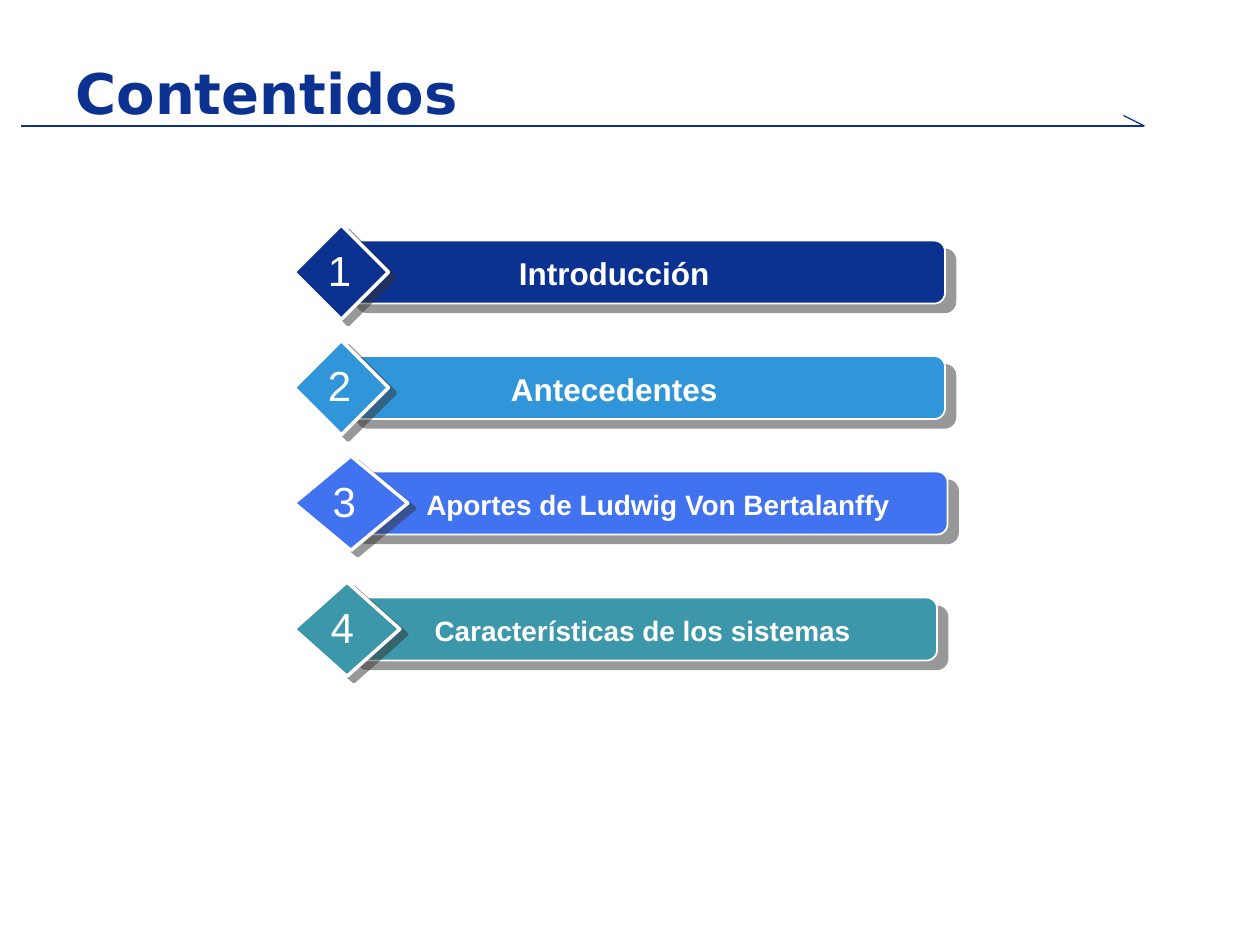
import pptx
import pptx.util
import pptx.dml.color
import pptx.enum.shapes
import pptx.enum.text
import pptx.oxml.ns
import lxml.etree

Pt = pptx.util.Pt
RGBColor = pptx.dml.color.RGBColor
SHAPE = pptx.enum.shapes.MSO_SHAPE
ALIGN = pptx.enum.text.PP_ALIGN
ANCHOR = pptx.enum.text.MSO_ANCHOR
qn = pptx.oxml.ns.qn

NAVY = RGBColor(0x0B, 0x31, 0x91)
SKY = RGBColor(0x31, 0x95, 0xD9)
BLUE = RGBColor(0x41, 0x73, 0xF1)
TEAL = RGBColor(0x3B, 0x97, 0xA9)
WHITE = RGBColor(0xFF, 0xFF, 0xFF)
SHADOW = RGBColor(0x33, 0x33, 0x33)


def add_block(kind, left, top, width, height, color, outline, distance, angle):
    block = slide.shapes.add_shape(kind, Pt(left), Pt(top), Pt(width), Pt(height))
    block.fill.solid()
    block.fill.fore_color.rgb = color
    block.line.color.rgb = WHITE
    block.line.width = Pt(outline)
    block.shadow.inherit = False
    effects = block._element.spPr.find(qn("a:effectLst"))
    shadow = lxml.etree.SubElement(
        effects, qn("a:outerShdw"), dist=str(Pt(distance)),
        dir=str(angle * 60000), algn="ctr", rotWithShape="0")
    tint = lxml.etree.SubElement(shadow, qn("a:srgbClr"), val=str(SHADOW))
    lxml.etree.SubElement(tint, qn("a:alpha"), val="50000")
    return block


def add_caption(text, left, top, width, height, size, bold, wrap):
    box = slide.shapes.add_textbox(Pt(left), Pt(top), Pt(width), Pt(height))
    box.text_frame.word_wrap = wrap
    box.text_frame.vertical_anchor = ANCHOR.MIDDLE
    paragraph = box.text_frame.paragraphs[0]
    paragraph.text = text
    paragraph.alignment = ALIGN.CENTER
    paragraph.font.name = "Arial"
    paragraph.font.size = Pt(size)
    paragraph.font.bold = bold
    paragraph.font.color.rgb = WHITE


presentation = pptx.Presentation()
presentation.slide_width = Pt(720)
presentation.slide_height = Pt(540)
slide = presentation.slides.add_slide(presentation.slide_layouts[5])

for x, y in [(12, 72), (642, 66)]:
    rule = slide.shapes.add_connector(
        pptx.enum.shapes.MSO_CONNECTOR.STRAIGHT, Pt(x), Pt(y), Pt(654), Pt(72))
    rule.line.color.rgb = NAVY
    rule.line.width = Pt(0.75)
    lxml.etree.SubElement(rule._element.spPr, qn("a:effectLst"))

title = slide.shapes.title
title.left, title.top, title.width, title.height = Pt(36), Pt(30), Pt(606), Pt(45)
title.text_frame.text = "Contentidos"
title.text_frame.vertical_anchor = ANCHOR.MIDDLE
heading = title.text_frame.paragraphs[0]
heading.alignment = ALIGN.LEFT
heading.font.name = "DejaVu Sans"
heading.font.size = Pt(32)
heading.font.bold = True
heading.font.color.rgb = NAVY

topics = [
    ("Introducción", NAVY, 137.5, 342, 54, 270, 18),
    ("Antecedentes", SKY, 203.5, 342, 54, 270, 18),
    ("Aportes de Ludwig Von Bertalanffy", BLUE, 269.5, 343.5, 65, 320, 16),
    ("Características de los sistemas", TEAL, 341.5, 337.5, 60.5, 302.5, 16),
]
for number, (topic, color, top, bar_width, diamond_width, label_width, size) in enumerate(topics, 1):
    bar = add_block(SHAPE.ROUNDED_RECTANGLE, 198, top, bar_width, 36, color, 1, 7.8, 40)
    bar.adjustments[0] = 0.17
    add_block(SHAPE.DIAMOND, 168, top - 9, diamond_width, 54, color, 2, 5, 37)
    add_caption(topic, 216, top + 4.5, label_width, 28, size, True, True)
    number_left = 180 + (diamond_width - 54) / 4
    add_caption(str(number), number_left, top - 1.5, 28, 36, 24, False, False)

presentation.save("out.pptx")
